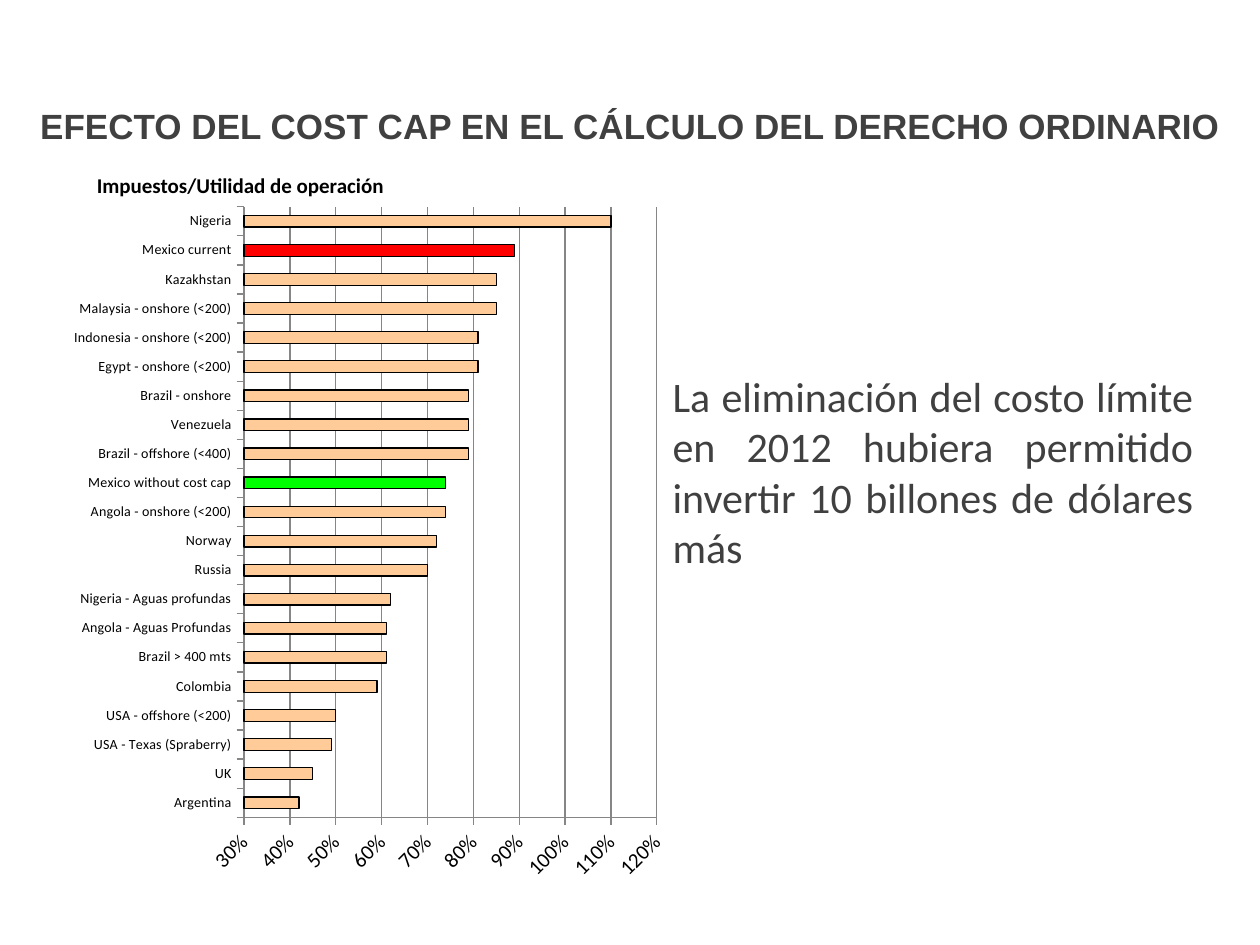
from lxml import etree
from pptx import Presentation
from pptx.chart.data import CategoryChartData
from pptx.dml.color import RGBColor
from pptx.enum.chart import XL_CHART_TYPE as ChartType, XL_TICK_MARK as Tick
from pptx.enum.text import MSO_ANCHOR as Anchor, PP_ALIGN as Align
from pptx.oxml.ns import qn
from pptx.util import Inches, Pt

BLACK = RGBColor(0x00, 0x00, 0x00)
DARK = RGBColor(0x40, 0x40, 0x40)
GRID = RGBColor(0x86, 0x86, 0x86)
PEACH = RGBColor(0xFF, 0xCC, 0x99)
RED = RGBColor(0xFF, 0x00, 0x00)
GREEN = RGBColor(0x00, 0xFF, 0x00)

# Taxes over operating profit, from the bottom bar to the top one
TAX_SHARES = {
    "Argentina": 0.42,
    "UK": 0.45,
    "USA - Texas (Spraberry)": 0.49,
    "USA - offshore (<200)": 0.50,
    "Colombia": 0.59,
    "Brazil > 400 mts": 0.61,
    "Angola - Aguas Profundas": 0.61,
    "Nigeria - Aguas profundas": 0.62,
    "Russia": 0.70,
    "Norway": 0.72,
    "Angola - onshore (<200)": 0.74,
    "Mexico without cost cap": 0.74,
    "Brazil - offshore (<400)": 0.79,
    "Venezuela": 0.79,
    "Brazil - onshore": 0.79,
    "Egypt - onshore (<200)": 0.81,
    "Indonesia - onshore (<200)": 0.81,
    "Malaysia - onshore (<200)": 0.85,
    "Kazakhstan": 0.85,
    "Mexico current": 0.89,
    "Nigeria": 1.10,
}
HIGHLIGHTS = {"Mexico without cost cap": GREEN, "Mexico current": RED}


def write(tf, text, size, font="Calibri", color=BLACK, bold=False,
          align=Align.LEFT, anchor=Anchor.TOP):
    tf.word_wrap = True
    tf.vertical_anchor = anchor
    p = tf.paragraphs[0]
    p.alignment = align
    r = p.add_run()
    r.text = text
    r.font.name, r.font.size, r.font.bold = font, Pt(size), bold
    r.font.color.rgb = color
    return r


class SlideBuilder:
    font = "Calibri"

    def __init__(self, prs):
        self.slide = prs.slides.add_slide(prs.slide_layouts[5])

    def title(self, text, box, size):
        sp = self.slide.shapes.title
        sp.left, sp.top, sp.width, sp.height = map(Inches, box)
        write(sp.text_frame, text, size, font="Arial", color=DARK, bold=True,
              align=Align.CENTER, anchor=Anchor.MIDDLE)

    def text(self, text, box, size, **style):
        sp = self.slide.shapes.add_textbox(*map(Inches, box))
        write(sp.text_frame, text, size, font=self.font, **style)

    def bar_chart(self, shares, highlights, box):
        data = CategoryChartData(number_format="0%")
        data.categories = list(shares)
        data.add_series("Series 1", list(shares.values()))
        chart = self.slide.shapes.add_chart(
            ChartType.BAR_CLUSTERED, *map(Inches, box), data).chart
        chart.has_legend = chart.has_title = False
        chart.font.name, chart.font.size = self.font, Pt(18)
        chart.font.color.rgb = BLACK

        # Bars
        plot = chart.plots[0]
        plot.gap_width = 150
        plot.vary_by_categories = False
        series = plot.series[0]
        self.paint(series.format, PEACH)
        for i, name in enumerate(shares):
            if name in highlights:
                self.paint(series.points[i].format, highlights[name])

        # Axes
        axis = chart.value_axis
        axis.minimum_scale, axis.maximum_scale, axis.major_unit = 0.3, 1.2, 0.1
        axis.has_major_gridlines = True
        axis.major_gridlines.format.line.color.rgb = GRID
        axis.tick_labels.number_format = "0%"
        axis.tick_labels.number_format_is_linked = False
        for ax, size in ((chart.category_axis, 8), (axis, 12)):
            ax.major_tick_mark = Tick.OUTSIDE
            ax.format.line.color.rgb = GRID
            ax.tick_labels.font.size = Pt(size)
        body = axis._element.find(qn("c:txPr")).find(qn("a:bodyPr"))
        body.set("rot", "-2700000")
        body.set("vert", "horz")
        self.place_plot(chart, x=0.3, y=0.02, w=0.67, h=0.87)

    @staticmethod
    def paint(fmt, color):
        fmt.fill.solid()
        fmt.fill.fore_color.rgb = color
        fmt.line.color.rgb = BLACK
        fmt.line.width = Pt(0.75)

    @staticmethod
    def place_plot(chart, **fractions):
        area = chart._chartSpace.chart.plotArea
        for old in area.findall(qn("c:layout")):
            area.remove(old)
        layout = etree.Element(qn("c:layout"))
        area.insert(0, layout)
        manual = etree.SubElement(layout, qn("c:manualLayout"))
        settings = {"layoutTarget": "inner", "xMode": "edge", "yMode": "edge"}
        for tag, val in {**settings, **fractions}.items():
            etree.SubElement(manual, qn("c:" + tag)).set("val", str(val))


def main():
    prs = Presentation()
    prs.slide_width, prs.slide_height = Inches(10), Inches(7.5)
    s = SlideBuilder(prs)

    s.title("EFECTO DEL COST CAP EN EL CÁLCULO DEL DERECHO ORDINARIO",
            (0, 0.75, 10, 0.5), 20)

    # Chart with its heading
    s.bar_chart(TAX_SHARES, HIGHLIGHTS, (0.47, 1.53, 4.89, 5.57))
    s.text("Impuestos/Utilidad de operación", (0.67, 1.32, 5.3, 0.3), 12, bold=True)

    # Conclusion
    s.text("La eliminación del costo límite en 2012 hubiera permitido "
           "invertir 10 billones de dólares más",
           (5.24, 2.89, 4.33, 1.72), 24, color=DARK, align=Align.JUSTIFY)

    prs.save("out.pptx")


if __name__ == "__main__":
    main()
